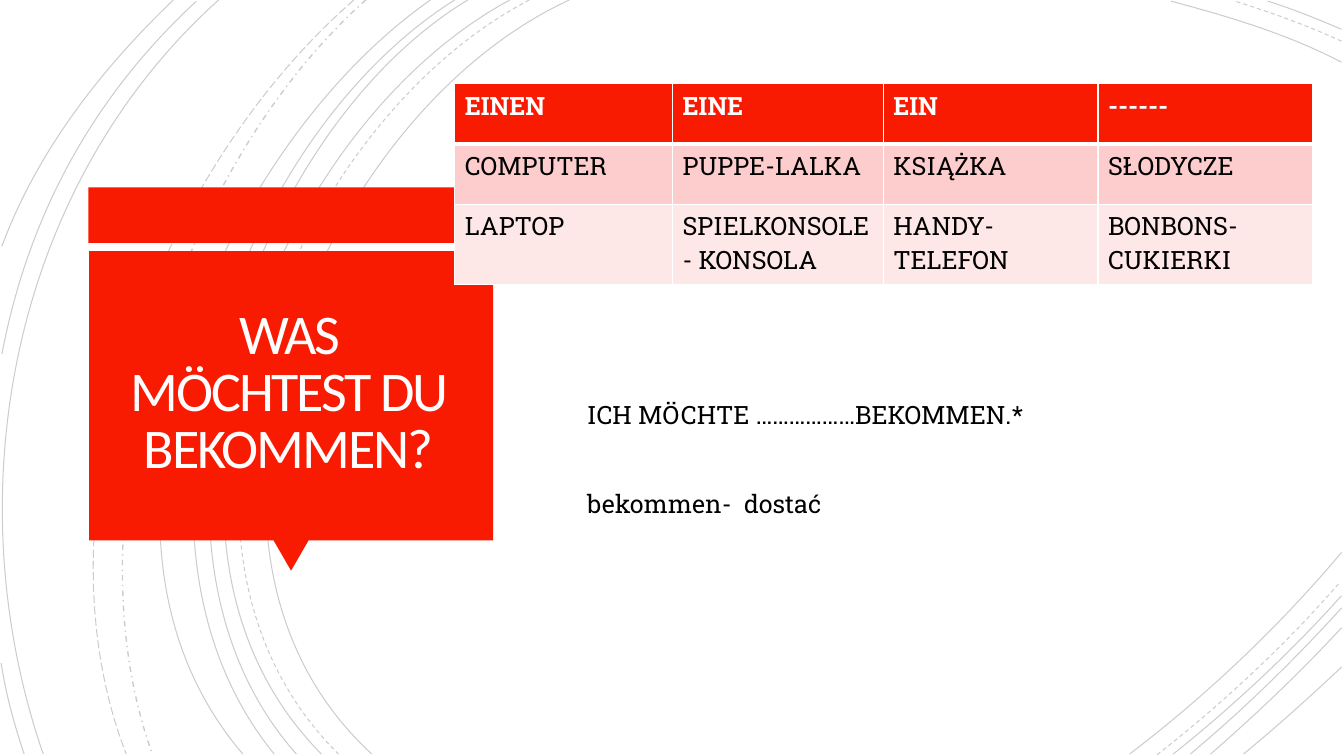
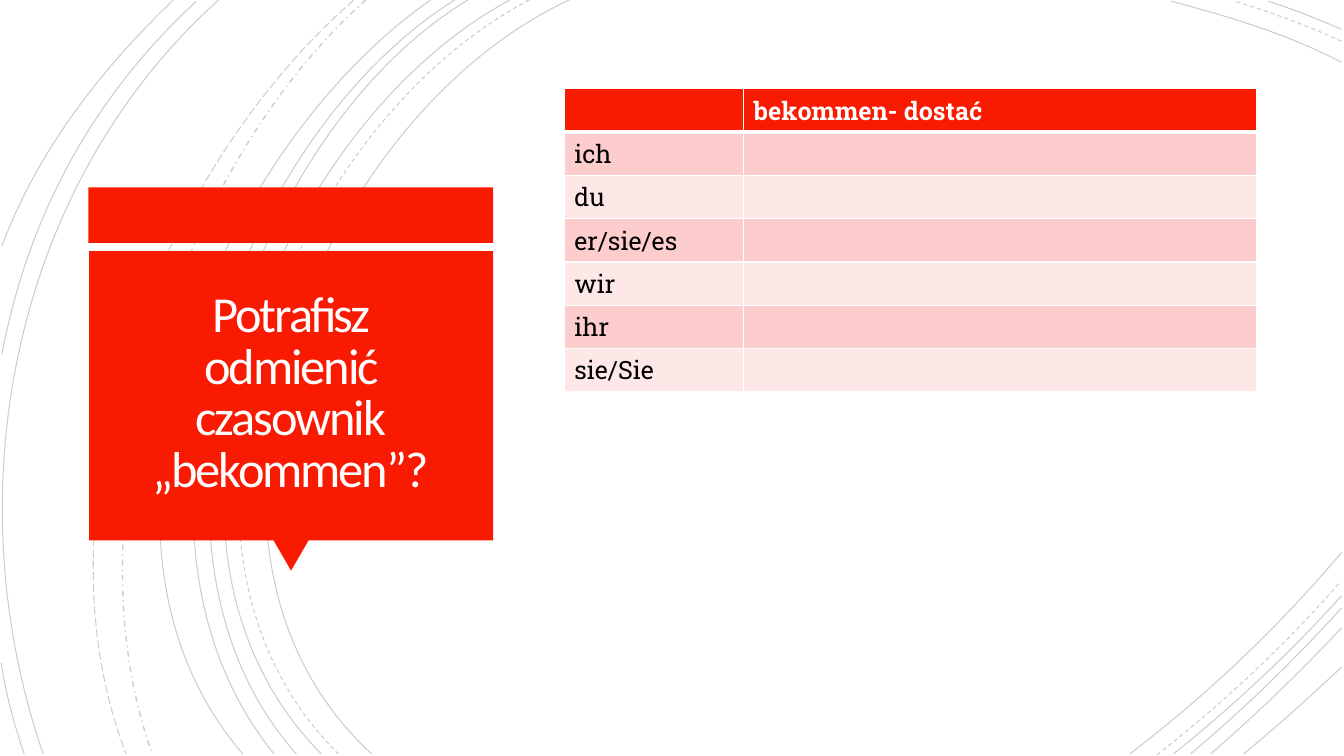
from dataclasses import dataclass

from lxml import etree
from pptx import Presentation
from pptx.dml.color import RGBColor
from pptx.enum.dml import MSO_LINE
from pptx.enum.shapes import MSO_SHAPE
from pptx.enum.text import MSO_ANCHOR, PP_ALIGN
from pptx.oxml.ns import qn
from pptx.slide import Slide
from pptx.table import _Cell
from pptx.text.text import _Run
from pptx.util import Cm, Pt

SOLID, DASH = MSO_LINE.SOLID, MSO_LINE.DASH
DASH_DOT, LONG_DASH = MSO_LINE.DASH_DOT, MSO_LINE.LONG_DASH
RECT, TRIANGLE = MSO_SHAPE.RECTANGLE, MSO_SHAPE.ISOSCELES_TRIANGLE
CENTER, MIDDLE = PP_ALIGN.CENTER, MSO_ANCHOR.MIDDLE

COLORS = {
    "accent": "F81B02",
    "band_dark": "FCCDCC",
    "band_light": "FEE8E7",
    "title": "FFFEFF",
    "white": "FFFFFF",
    "text": "000000",
}
TITLE_FONT, BODY_FONT = "Calibri", "Roboto Slab"
BODY_SIZE = 18
BLANK_LAYOUT = 6
Point = tuple[float, float]


@dataclass(frozen=True)
class Arc:
    """A Bézier curve in cm: start, two control points, end."""
    start: Point
    control_1: Point
    control_2: Point
    end: Point
    dash: MSO_LINE = SOLID
    width: float = 0.75


@dataclass(frozen=True)
class Panel:
    """A red part of the title block, in cm."""
    kind: MSO_SHAPE
    left: float
    top: float
    width: float
    height: float
    rotation: int = 0


@dataclass(frozen=True)
class Title:
    lines: tuple[str, ...]
    size: int
    left: float


@dataclass(frozen=True)
class Grid:
    """A table; a line feed in a cell starts a new paragraph."""
    left: float
    top: float
    columns: tuple[float, ...]
    row_heights: tuple[float, ...]
    rows: tuple[tuple[str, ...], ...]


ARCS = (
    # Left sweep, from the inside out
    Arc((14.35, 0), (8, 2.92), (3.63, 13.72), (9.37, 19)),
    Arc((13.34, 0), (7.24, 3.18), (3.12, 13.64), (8.53, 19), DASH),
    Arc((12.85, 0), (6.86, 3.23), (2.79, 13.64), (8.1, 19)),
    Arc((11.79, 0), (6.2, 3.38), (2.79, 13.74), (7.47, 19)),
    Arc((11.46, 0), (5.87, 3.51), (2.46, 13.54), (6.91, 19)),
    Arc((10.85, 0), (5.51, 3.73), (1.35, 13.44), (6.12, 19)),
    Arc((9.22, 0), (4.47, 4.22), (1.65, 12.93), (3.84, 19), DASH_DOT, 1),
    Arc((8.92, 0), (3.99, 4.29), (0.74, 12.67), (3.18, 19), LONG_DASH),
    Arc((5.51, 0), (0.28, 4.7), (-1.17, 12.45), (1.09, 19)),
    Arc((4.95, 0.03), (2.34, 2.44), (0.71, 5.44), (0.05, 8.92)),
    Arc((0.03, 16.71), (0.15, 17.5), (0.36, 18.26), (0.61, 19)),
    Arc((4.37, 0), (2.54, 1.75), (0.94, 3.81), (0.05, 6.2)),
    # Top right corner
    Arc((33.81, 1.57), (32.46, 0.86), (30.94, 0.41), (29.51, 0.03)),
    Arc((33.81, 1.04), (32.94, 0.64), (32, 0.3), (31.12, 0.03), DASH),
    Arc((33.81, 0.74), (33.2, 0.48), (32.59, 0.23), (31.95, 0.03)),
    # Bottom right corner
    Arc((28.47, 19), (30.4, 17.53), (32.23, 15.8), (33.81, 13.92)),
    Arc((29.16, 19.02), (30.81, 17.73), (32.39, 16.26), (33.78, 14.66), DASH),
    Arc((29.57, 19), (31.06, 17.81), (32.51, 16.46), (33.81, 15.01)),
    Arc((30, 19), (31.34, 17.88), (32.61, 16.64), (33.81, 15.32)),
    Arc((30.51, 19), (31.65, 18.01), (32.77, 16.94), (33.81, 15.82)),
    Arc((31.34, 19), (32.18, 18.31), (32.99, 17.58), (33.81, 16.81)),
)

PANELS = (
    Panel(RECT, 2.23, 4.72, 10.2, 1.4),
    Panel(TRIANGLE, 6.89, 13.61, 0.89, 0.77, 180),
    Panel(RECT, 2.25, 6.33, 10.18, 7.29),
)

WISH_TITLE = Title(("WAS MÖCHTEST DU BEKOMMEN?",), 40, 2.41)
WISH_GRID = Grid(
    11.46, 2.11, (5.49, 5.31, 5.41, 5.41), (1.52, 1.52, 2.01),
    (
        ("EINEN", "EINE", "EIN", "------"),
        ("COMPUTER", "PUPPE-LALKA", "KSIĄŻKA", "SŁODYCZE"),
        ("LAPTOP", "SPIELKONSOLE- KONSOLA", "HANDY- TELEFON",
         "BONBONS-\nCUKIERKI"),
    ),
)
WISH_SENTENCES = ("ICH MÖCHTE ………………BEKOMMEN.*", "bekommen-  dostać")

VERB_TITLE = Title(("Potrafisz odmienić czasownik", "„bekommen”?"), 36, 2.46)
PRONOUNS = ("ich", "du", "er/sie/es", "wir", "ihr", "sie/Sie")
VERB_GRID = Grid(
    14.22, 2.24, (4.52, 12.93), (1.09,) * (len(PRONOUNS) + 1),
    (("", "bekommen- dostać"), *((pronoun, "") for pronoun in PRONOUNS)),
)


def rgb(name: str) -> RGBColor:
    return RGBColor.from_string(COLORS[name])


def style_run(run: _Run, font: str, size: int, color: str,
              bold: bool = False) -> None:
    run.font.name = font
    run.font.size = Pt(size)
    run.font.bold = bold
    run.font.color.rgb = rgb(color)


def draw_arc(slide: Slide, arc: Arc) -> None:
    points = [(Cm(x), Cm(y)) for x, y in
              (arc.start, arc.control_1, arc.control_2, arc.end)]
    builder = slide.shapes.build_freeform(*points[0])
    builder.add_line_segments(points[1:], close=False)
    curve = builder.convert_to_shape()
    curve.shadow.inherit = False
    curve.fill.background()
    curve.line.color.rgb = rgb("text")
    curve.line.width = Pt(arc.width)
    curve.line.dash_style = arc.dash

    # Turn the three segments into one Bézier curve
    segments = list(curve._element.iter(qn("a:lnTo")))
    outline = segments[0].getparent()
    bezier = etree.SubElement(outline, qn("a:cubicBezTo"))
    for segment in segments:
        bezier.append(segment[0])
        outline.remove(segment)

    # Make the line 20 % opaque
    line_color = curve.line._ln.find(".//" + qn("a:srgbClr"))
    etree.SubElement(line_color, qn("a:alpha"), val="20000")


def draw_panel(slide: Slide, panel: Panel) -> None:
    block = slide.shapes.add_shape(
        panel.kind, Cm(panel.left), Cm(panel.top),
        Cm(panel.width), Cm(panel.height))
    block.rotation = panel.rotation
    block.shadow.inherit = False
    block.fill.solid()
    block.fill.fore_color.rgb = rgb("accent")
    block.line.fill.background()


def draw_title(slide: Slide, title: Title) -> None:
    frame = slide.shapes.add_textbox(
        Cm(title.left), Cm(6.53), Cm(9.73), Cm(6.83)).text_frame
    frame.word_wrap = True
    frame.vertical_anchor = MIDDLE
    frame.margin_left = frame.margin_right = Cm(0.64)
    frame.margin_top = frame.margin_bottom = Cm(0.64)
    paragraph = frame.paragraphs[0]
    paragraph.alignment = CENTER
    paragraph.line_spacing = 0.85
    for index, line in enumerate(title.lines):
        if index:
            paragraph.add_line_break()
        run = paragraph.add_run()
        run.text = line
        style_run(run, TITLE_FONT, title.size, "title")
        run._r.get_or_add_rPr().set("spc", "-150")


def set_borders(cell: _Cell, bottom: float) -> None:
    properties = cell._tc.get_or_add_tcPr()
    widths = {"a:lnL": 1, "a:lnR": 1, "a:lnT": 1, "a:lnB": bottom}
    for position, (side, width) in enumerate(widths.items()):
        border = etree.Element(qn(side), w=str(Pt(width)))
        fill = etree.SubElement(border, qn("a:solidFill"))
        etree.SubElement(fill, qn("a:srgbClr"), val=COLORS["white"])
        properties.insert(position, border)


def fill_cell(cell: _Cell, text: str, row: int) -> None:
    header = row == 0
    band = "band_dark" if row % 2 else "band_light"
    cell.fill.solid()
    cell.fill.fore_color.rgb = rgb("accent" if header else band)
    set_borders(cell, bottom=3 if header else 1)
    if not text:
        return
    frame = cell.text_frame
    for index, line in enumerate(text.split("\n")):
        paragraph = frame.add_paragraph() if index else frame.paragraphs[0]
        run = paragraph.add_run()
        run.text = line
        style_run(run, BODY_FONT, BODY_SIZE,
                  "white" if header else "text", header)


def draw_grid(slide: Slide, grid: Grid) -> None:
    table = slide.shapes.add_table(
        len(grid.rows), len(grid.columns), Cm(grid.left), Cm(grid.top),
        Cm(sum(grid.columns)), Cm(sum(grid.row_heights))).table
    for column, width in zip(table.columns, grid.columns):
        column.width = Cm(width)
    for row, height in zip(table.rows, grid.row_heights):
        row.height = Cm(height)
    for row_index, texts in enumerate(grid.rows):
        for column_index, text in enumerate(texts):
            fill_cell(table.cell(row_index, column_index), text, row_index)


def draw_sentences(slide: Slide, sentences: tuple[str, ...]) -> None:
    frame = slide.shapes.add_textbox(
        Cm(14.55), Cm(9.93), Cm(18.77), Cm(3.33)).text_frame
    frame.word_wrap = True
    for index, sentence in enumerate(sentences):
        paragraph = frame.add_paragraph() if index else frame.paragraphs[0]
        paragraph.space_before = Pt(42 if index else 0)
        run = paragraph.add_run()
        run.text = sentence
        style_run(run, BODY_FONT, BODY_SIZE, "text")


def add_lesson_slide(deck: Presentation, title: Title, grid: Grid) -> Slide:
    slide = deck.slides.add_slide(deck.slide_layouts[BLANK_LAYOUT])
    for arc in ARCS:
        draw_arc(slide, arc)
    for panel in PANELS:
        draw_panel(slide, panel)
    draw_title(slide, title)
    draw_grid(slide, grid)
    return slide


def main() -> None:
    deck = Presentation()
    deck.slide_width, deck.slide_height = Cm(33.87), Cm(19.05)

    # Slide 1: wishes
    wishes = add_lesson_slide(deck, WISH_TITLE, WISH_GRID)
    draw_sentences(wishes, WISH_SENTENCES)

    # Slide 2: conjugation
    add_lesson_slide(deck, VERB_TITLE, VERB_GRID)

    deck.save("out.pptx")


if __name__ == "__main__":
    main()
